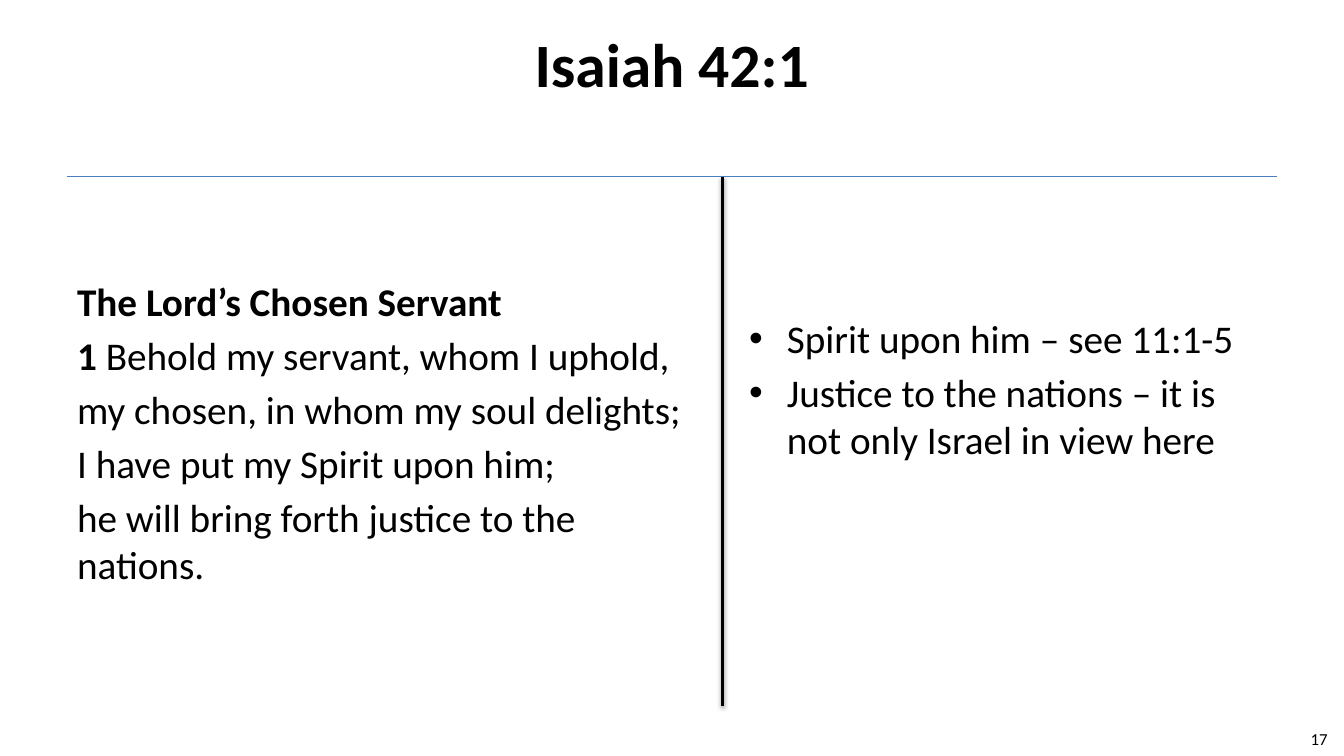
from lxml.etree import SubElement
from pptx import Presentation
from pptx.dml.color import RGBColor
from pptx.enum.shapes import MSO_CONNECTOR
from pptx.enum.text import MSO_ANCHOR, PP_ALIGN
from pptx.oxml.ns import qn
from pptx.util import Pt

BLACK = RGBColor(0x00, 0x00, 0x00)
BLUE = RGBColor(0x4B, 0x7E, 0xBC)
FONT = "Calibri"
TITLE_SIZE, BODY_SIZE, NUMBER_SIZE = 44, 28, 12
PARAGRAPH_GAP = 5
BULLET_INDENT = 27

PASSAGE = [
    [("The Lord’s Chosen Servant", True)],
    [("1 ", True), ("Behold my servant, whom I uphold,", False)],
    [("my chosen, in whom my soul delights;", False)],
    [("I have put my Spirit upon him;", False)],
    [("he will bring forth justice to the nations.", False)],
]
NOTES = [
    [("Spirit upon him – see 11:1-5", False)],
    [("Justice to the nations – it is not only Israel in view here", False)],
]


def add_span(para, text, size, bold=False):
    span = para.add_run()
    span.text = text
    span.font.name = FONT
    span.font.size = Pt(size)
    span.font.bold = bold
    span.font.color.rgb = BLACK


def place(shape, left, top, width, height):
    shape.left, shape.top = Pt(left), Pt(top)
    shape.width, shape.height = Pt(width), Pt(height)


def add_title(page, text, left, top, width, height):
    title = page.shapes.title
    place(title, left, top, width, height)
    title.text_frame.vertical_anchor = MSO_ANCHOR.MIDDLE
    para = title.text_frame.paragraphs[0]
    para.alignment = PP_ALIGN.CENTER
    add_span(para, text, TITLE_SIZE, bold=True)


def add_bullet(para):
    properties = para._p.get_or_add_pPr()
    properties.set("marL", str(Pt(BULLET_INDENT)))
    properties.set("indent", str(-Pt(BULLET_INDENT)))
    SubElement(properties, qn("a:buFont"), typeface="Arial")
    SubElement(properties, qn("a:buChar"), char="•")


def add_column(page, paragraphs, left, top, width, height, bulleted=False):
    box = page.shapes.add_textbox(Pt(left), Pt(top), Pt(width), Pt(height))
    frame = box.text_frame
    frame.word_wrap = True
    for index, spans in enumerate(paragraphs):
        para = frame.add_paragraph() if index else frame.paragraphs[0]
        if bulleted:
            add_bullet(para)
        if index:
            para.space_before = Pt(PARAGRAPH_GAP)
        for text, bold in spans:
            add_span(para, text, BODY_SIZE, bold)


def add_page_number(page, number, left, top, width, height):
    box = page.shapes.add_textbox(Pt(left), Pt(top), Pt(width), Pt(height))
    frame = box.text_frame
    frame.word_wrap = True
    frame.vertical_anchor = MSO_ANCHOR.MIDDLE
    para = frame.paragraphs[0]
    para.alignment = PP_ALIGN.RIGHT
    add_span(para, number, NUMBER_SIZE)


def add_line(page, start, end, color, weight):
    """Draw a straight line and return its empty effect list."""
    line = page.shapes.add_connector(
        MSO_CONNECTOR.STRAIGHT, *map(Pt, start), *map(Pt, end))
    line.line.color.rgb = color
    line.line.width = Pt(weight)
    return SubElement(line._element.spPr, qn("a:effectLst"))


def add_soft_shadow(effects):
    shadow = SubElement(
        effects, qn("a:outerShdw"), blurRad=str(Pt(3.1)), dist=str(Pt(1.6)),
        dir="5400000", rotWithShape="0")
    color = SubElement(shadow, qn("a:srgbClr"), val=str(BLACK))
    SubElement(color, qn("a:alpha"), val="38000")


def add_dividers(page, left, top, width, height, middle):
    """Rule the top of the box and split it at the given x position."""
    effects = add_line(page, (middle, top), (middle, top + height), BLACK, 2)
    add_soft_shadow(effects)
    add_line(page, (left, top), (left + width, top), BLUE, 0.75)


def build_passage_slide(deck):
    page = deck.slides.add_slide(deck.slide_layouts[5])
    add_title(page, "Isaiah 42:1", 48, 0, 864, 90)
    add_column(page, PASSAGE, 48, 194.4, 462, 316.8)
    add_column(page, NOTES, 528, 221, 384, 277, bulleted=True)
    add_page_number(page, "17", 883.5, 513.5, 72, 28.8)
    add_dividers(page, 48, 126, 864, 378, middle=516)


def main():
    deck = Presentation()
    deck.slide_width, deck.slide_height = Pt(960), Pt(540)
    build_passage_slide(deck)
    deck.save("out.pptx")


if __name__ == "__main__":
    main()
